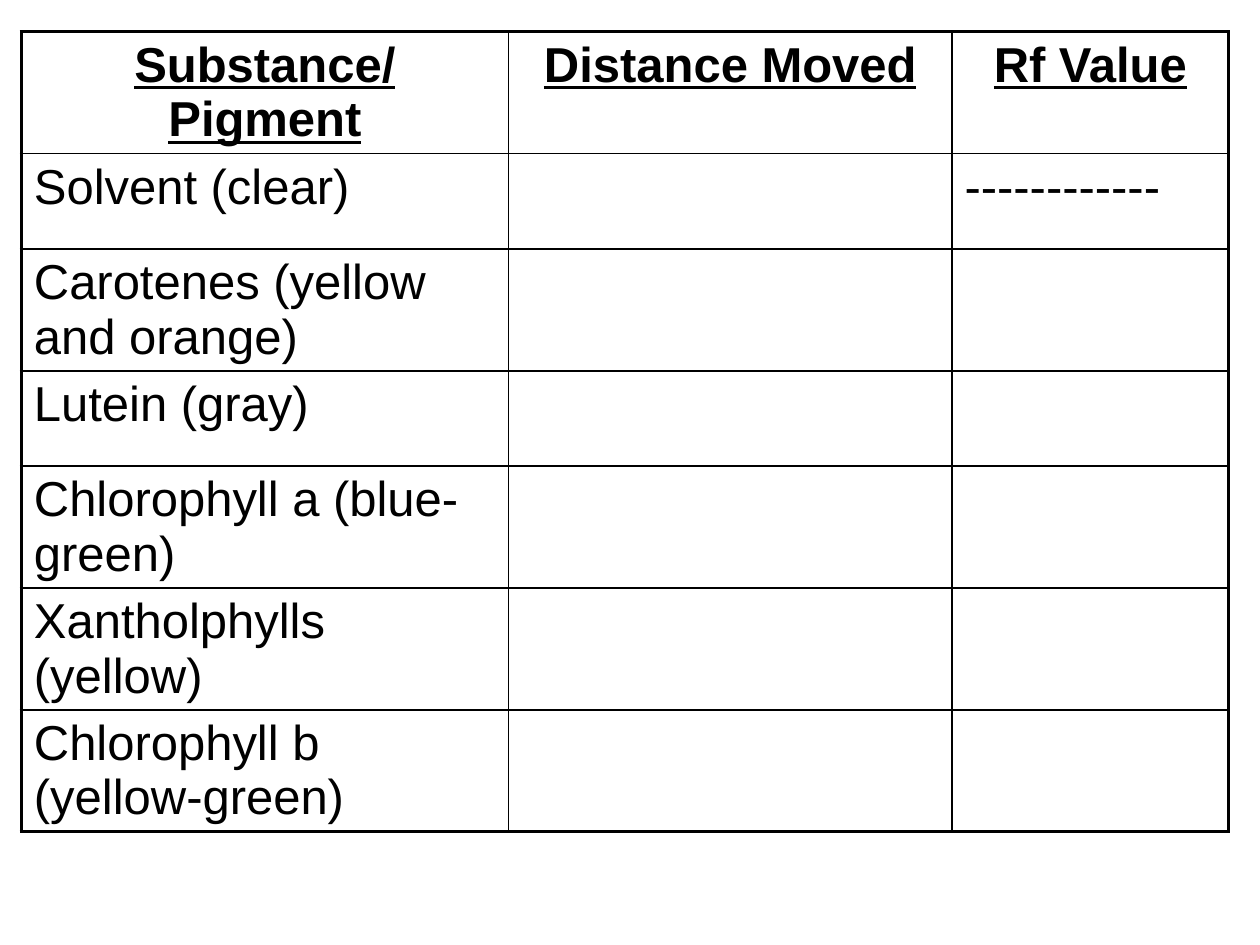
import pptx
import pptx.dml.color
import pptx.enum.text
import pptx.oxml.ns
import pptx.util
from lxml import etree

Cm, Pt = pptx.util.Cm, pptx.util.Pt
ALIGN = pptx.enum.text.PP_ALIGN
BLACK = pptx.dml.color.RGBColor(0, 0, 0)
OUTER, INNER = Pt(2.25), Pt(1)

HEADERS = ["Substance/ Pigment", "Distance Moved", "Rf Value"]
ROWS = [
    ["Solvent (clear)", "", "------------"],
    ["Carotenes (yellow and orange)", "", ""],
    ["Lutein (gray)", "", ""],
    ["Chlorophyll a (blue-green)", "", ""],
    ["Xantholphylls (yellow)", "", ""],
    ["Chlorophyll b (yellow-green)", "", ""],
]
COLUMN_WIDTHS = [Cm(9.82), Cm(8.94), Cm(5.58)]
HEADER_HEIGHT, ROW_HEIGHT = Cm(2.1), Cm(1.92)

BODY_FONT = {"name": "Arial", "size": Pt(28), "bold": False, "underline": False}
HEADER_FONT = {**BODY_FONT, "bold": True, "underline": True}


def set_borders(cell, widths):
    """Draw black cell edges; widths maps L, R, T and B, in that order, to lengths."""
    tc_pr = cell._tc.get_or_add_tcPr()
    qn = pptx.oxml.ns.qn
    for side, width in widths.items():
        ln = etree.SubElement(tc_pr, qn(f"a:ln{side}"), w=str(int(width)))
        fill = etree.SubElement(ln, qn("a:solidFill"))
        etree.SubElement(fill, qn("a:srgbClr"), val=str(BLACK))


def write_text(cell, text, fmt, alignment):
    p = cell.text_frame.paragraphs[0]
    p.alignment = alignment
    r = p.add_run()
    r.text = text
    for name, value in fmt.items():
        setattr(r.font, name, value)
    r.font.color.rgb = BLACK


def add_pigment_table(slide, left, top):
    data = [HEADERS] + ROWS
    last_row, last_col = len(data) - 1, len(HEADERS) - 1
    height = HEADER_HEIGHT + ROW_HEIGHT * len(ROWS)
    table = slide.shapes.add_table(
        len(data), len(HEADERS), left, top, sum(COLUMN_WIDTHS), height
    ).table
    table.first_row = table.horz_banding = False
    for column, width in zip(table.columns, COLUMN_WIDTHS):
        column.width = width
    for i, values in enumerate(data):
        table.rows[i].height = ROW_HEIGHT if i else HEADER_HEIGHT
        for j, text in enumerate(values):
            cell = table.cell(i, j)
            set_borders(cell, {
                "L": OUTER if j == 0 else INNER,
                "R": OUTER if j == last_col else INNER,
                "T": OUTER if i == 0 else INNER,
                "B": OUTER if i == last_row else INNER,
            })
            cell.fill.background()
            if text:
                write_text(cell, text, BODY_FONT if i else HEADER_FONT,
                           ALIGN.LEFT if i else ALIGN.CENTER)


def main():
    prs = pptx.Presentation()
    prs.slide_width, prs.slide_height = Cm(25.4), Cm(19.05)
    slide = prs.slides.add_slide(prs.slide_layouts[6])
    add_pigment_table(slide, Cm(0.43), Cm(0.64))
    prs.save("out.pptx")


if __name__ == "__main__":
    main()
